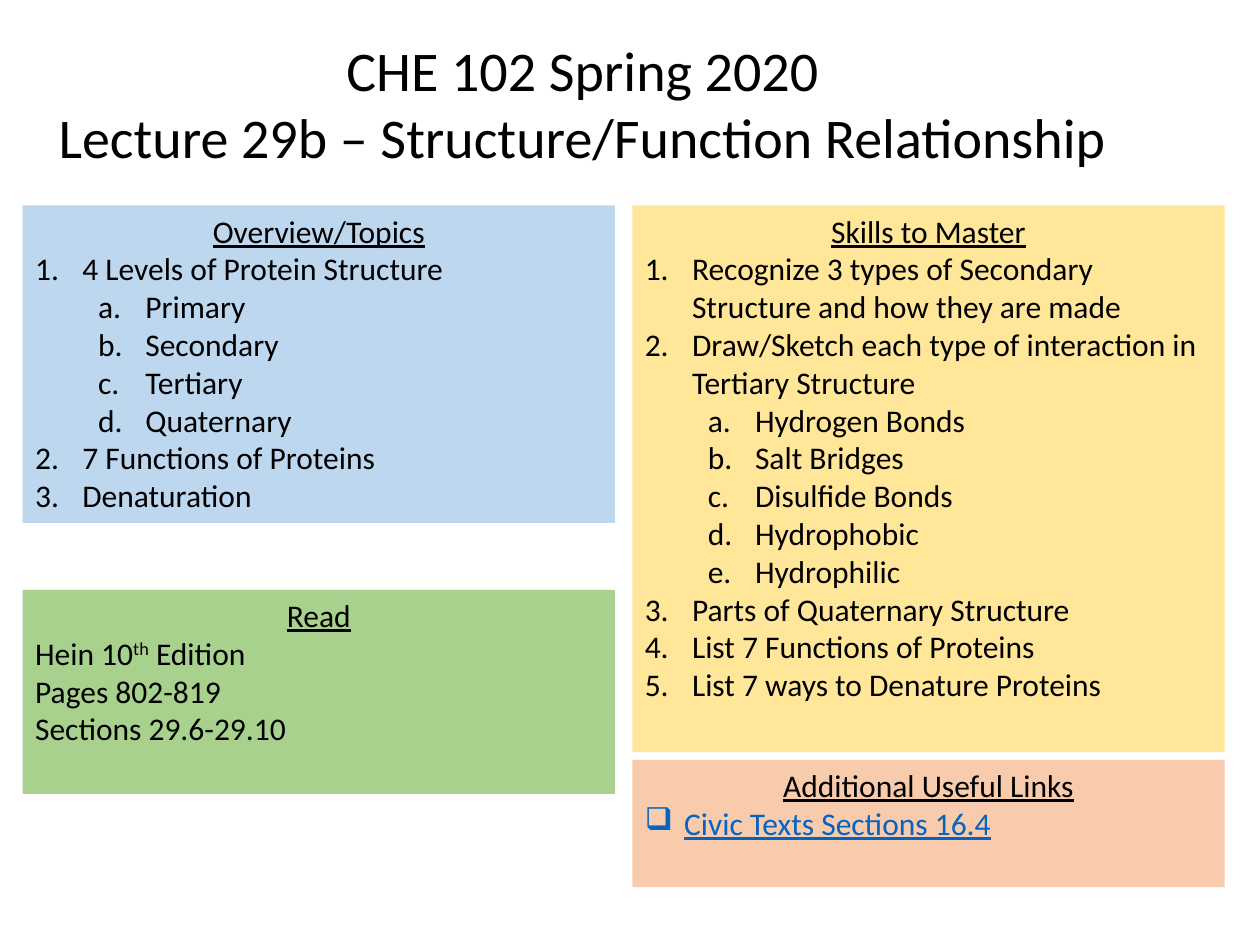
from pptx import Presentation
from pptx.dml.color import RGBColor
from pptx.enum.shapes import MSO_SHAPE as Shape
from pptx.enum.text import MSO_ANCHOR as Anchor, PP_ALIGN as Align
from pptx.oxml.xmlchemy import OxmlElement
from pptx.util import Pt

FONT = "Calibri"
COLORS = {
    "text": "000000",
    "link": "0563C1",
    "topics": "BDD7EE",
    "skills": "FFE699",
    "read": "A9D18E",
    "links": "F8CBAD",
}
LEFT_COLUMN, RIGHT_COLUMN, PANEL_WIDTH = 13, 361.4, 338.4
LIST_STYLES = {
    "number": (0, 27, 27, "buAutoNum", "type", "arabicPeriod"),
    "letter": (1, 63, 27, "buAutoNum", "type", "alphaLcPeriod"),
    "box": (0, 22.5, 22.5, "buChar", "char", "❑"),
}

TOPICS = [
    ("number", "4 Levels of Protein Structure"),
    ("letter", "Primary"),
    ("letter", "Secondary"),
    ("letter", "Tertiary"),
    ("letter", "Quaternary"),
    ("number", "7 Functions of Proteins"),
    ("number", "Denaturation"),
]
SKILLS = [
    ("number", "Recognize 3 types of Secondary Structure and how they are made"),
    ("number", "Draw/Sketch each type of interaction in Tertiary Structure"),
    ("letter", "Hydrogen Bonds"),
    ("letter", "Salt Bridges"),
    ("letter", "Disulfide Bonds"),
    ("letter", "Hydrophobic"),
    ("letter", "Hydrophilic"),
    ("number", "Parts of Quaternary Structure"),
    ("number", "List 7 Functions of Proteins"),
    ("number", "List 7 ways to Denature Proteins"),
]
TITLE = ["CHE 102 Spring 2020", "Lecture 29b – Structure/Function Relationship"]


def add_run(paragraph, text, size=18, color="text", underline=False):
    """Append one formatted run to a paragraph and return it."""
    run = paragraph.add_run()
    run.text = text
    run.font.name = FONT
    run.font.size = Pt(size)
    run.font.underline = underline
    run.font.color.rgb = RGBColor.from_string(COLORS[color])
    return run


def add_list_paragraph(frame, style):
    """Add an empty paragraph with the indents and marker of a list style."""
    level, margin, hang, tag, attribute, value = LIST_STYLES[style]
    paragraph = frame.add_paragraph()
    paragraph.alignment = Align.LEFT
    paragraph.level = level
    properties = paragraph._p.get_or_add_pPr()
    properties.set("marL", str(Pt(margin)))
    properties.set("indent", str(-Pt(hang)))
    marker = OxmlElement(f"a:{tag}")
    marker.set(attribute, value)
    properties.append(marker)
    return paragraph


def add_list(frame, items):
    """Add one list paragraph for each style and text."""
    for style, text in items:
        add_run(add_list_paragraph(frame, style), text)


def add_panel(slide, left, top, height, fill, heading):
    """Draw a coloured panel with an underlined heading and return its text frame."""
    shape = slide.shapes.add_shape(
        Shape.RECTANGLE, Pt(left), Pt(top), Pt(PANEL_WIDTH), Pt(height))
    shape.shadow.inherit = False
    shape.fill.solid()
    shape.fill.fore_color.rgb = RGBColor.from_string(COLORS[fill])
    shape.line.fill.background()
    frame = shape.text_frame
    frame.word_wrap = True
    frame.vertical_anchor = Anchor.TOP
    paragraph = frame.paragraphs[0]
    paragraph.alignment = Align.CENTER
    add_run(paragraph, heading, underline=True)
    return frame


def add_reading(frame):
    """List the textbook edition, pages and sections."""
    for texts in (["Hein 10", "th", " Edition"], ["Pages 802-819"], ["Sections 29.6-29.10"]):
        paragraph = frame.add_paragraph()
        paragraph.alignment = Align.LEFT
        for text in texts:
            run = add_run(paragraph, text)
            if text == "th":
                run.font._element.set("baseline", "30000")


def add_title(slide):
    """Add the centred two-line course title."""
    frame = slide.shapes.add_textbox(Pt(23), Pt(16.6), Pt(620), Pt(85)).text_frame
    frame.word_wrap = False
    for index, text in enumerate(TITLE):
        paragraph = frame.add_paragraph() if index else frame.paragraphs[0]
        paragraph.alignment = Align.CENTER
        add_run(paragraph, text, size=32)


def main():
    """Build the lecture overview slide and save it."""
    presentation = Presentation()
    presentation.slide_width, presentation.slide_height = Pt(720), Pt(540)
    slide = presentation.slides.add_slide(presentation.slide_layouts[6])
    add_list(add_panel(slide, LEFT_COLUMN, 117.4, 181.4, "topics", "Overview/Topics"), TOPICS)
    add_list(add_panel(slide, RIGHT_COLUMN, 117.4, 312.5, "skills", "Skills to Master"), SKILLS)
    add_reading(add_panel(slide, LEFT_COLUMN, 337, 116.6, "read", "Read"))
    links = add_panel(slide, RIGHT_COLUMN, 434.2, 72.7, "links", "Additional Useful Links")
    add_run(add_list_paragraph(links, "box"), "Civic Texts Sections 16.4",
            color="link", underline=True)
    add_title(slide)
    presentation.save("out.pptx")


if __name__ == "__main__":
    main()
